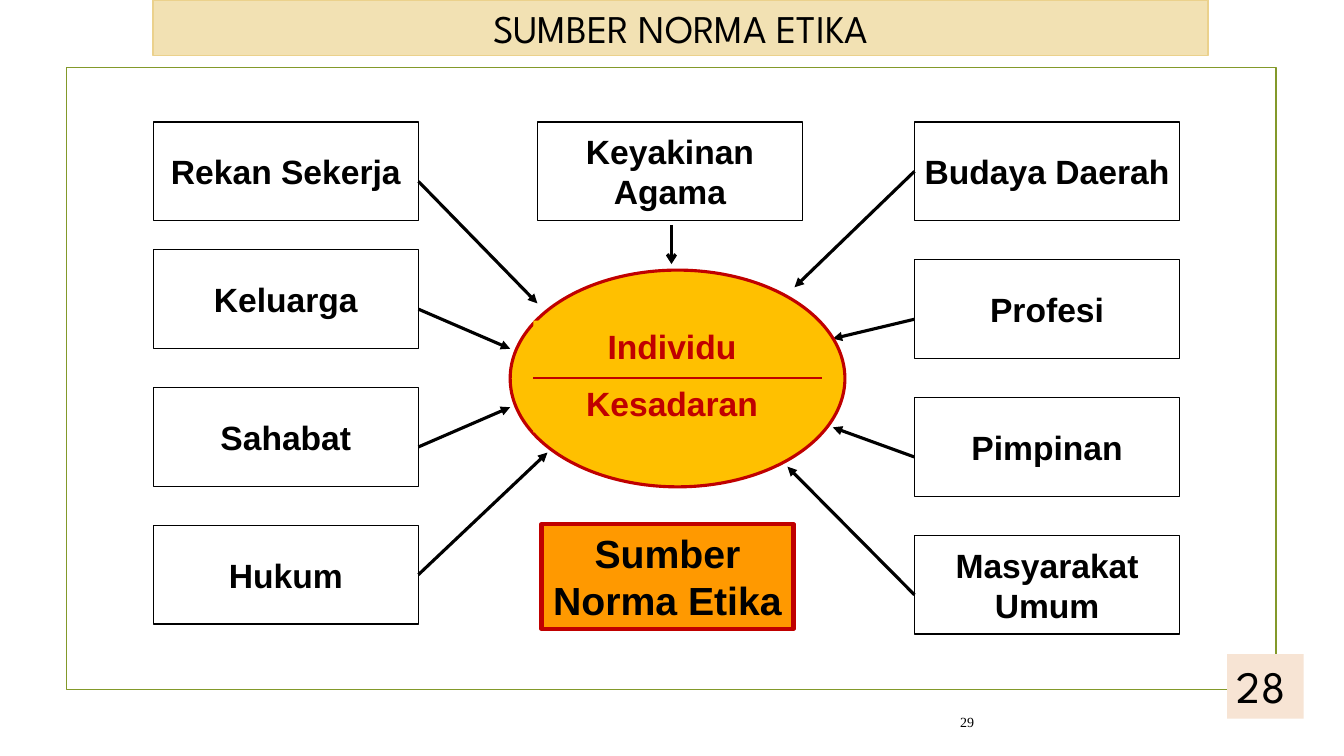
"""Build the slide on the sources of ethical norms."""
from lxml import etree
from pptx import Presentation, util as u
from pptx.dml.color import RGBColor
from pptx.enum import shapes, text
from pptx.oxml import ns

THEME = {
    "black": "000000", "red": "C00000", "gold": "FFC000", "orange": "FF9900",
    "olive": "83992A", "sand": "F2E1B3", "sand_edge": "EBD18C", "peach": "F7E4D4",
    "body_font": "Arial", "head_font": "League Spartan", "number_font": "Times New Roman",
    "label": 24, "heading": 28, "page": 32, "footer": 10,
}
TITLE = "SUMBER NORMA ETIKA"
CAPTION = "Sumber Norma Etika"
CENTRE = ["Individu", "Kesadaran"]
PAGE, FOOTER = "28", "29"
TOP_SOURCE = "Keyakinan Agama"

COLUMNS = {"left": 1.52, "middle": 5.33, "right": 9.07}
BOX_WIDTH, BOX_HEIGHT = 2.63, 0.98
FIRST_ROW, ROW_STEP = 1.21, 1.367
LEFT_SHIFT = 0.1

# Each source: label, arrow start below the box top, arrow tip
SOURCES = {
    "left": [
        ("Rekan Sekerja", 0.59, (5.33, 3.01)),
        ("Keluarga", 0.59, (5.06, 3.46)),
        ("Sahabat", 0.59, (5.06, 4.04)),
        ("Hukum", 0.49, (5.43, 4.49)),
    ],
    "right": [
        ("Budaya Daerah", 0.49, (7.88, 2.85)),
        ("Profesi", 0.59, (8.26, 3.36)),
        ("Pimpinan", 0.59, (8.26, 4.24)),
        ("Masyarakat Umum", 0.59, (7.81, 4.63)),
    ],
}


def colour(name):
    return RGBColor.from_string(THEME[name])


def apply(target, values):
    for name, value in values.items():
        setattr(target, name, value)


def place(shape, left, top, width, height):
    apply(shape, {"left": u.Inches(left), "top": u.Inches(top),
                  "width": u.Inches(width), "height": u.Inches(height)})


def paint(shape, fill=None, line=None, weight=1):
    if fill:
        shape.fill.solid()
        shape.fill.fore_color.rgb = colour(fill)
    else:
        shape.fill.background()
    if line:
        shape.line.color.rgb = colour(line)
        shape.line.width = u.Pt(weight)
    else:
        shape.line.fill.background()


def write(shape, lines, size="label", font="body_font", ink="black", bold=True,
          align=text.PP_ALIGN.CENTER, anchor=text.MSO_ANCHOR.MIDDLE):
    frame = shape.text_frame
    apply(frame, {"word_wrap": True, "auto_size": text.MSO_AUTO_SIZE.NONE,
                  "vertical_anchor": anchor,
                  "margin_left": u.Inches(0.1), "margin_right": u.Inches(0.1),
                  "margin_top": u.Inches(0.05), "margin_bottom": u.Inches(0.05)})
    for index, line in enumerate(lines):
        paragraph = frame.add_paragraph() if index else frame.paragraphs[0]
        paragraph.text = line
        paragraph.alignment = align
        if index:
            paragraph.space_before = u.Pt(THEME[size] / 2)
        apply(paragraph.font, {"name": THEME[font], "size": u.Pt(THEME[size]), "bold": bold})
        paragraph.font.color.rgb = colour(ink)


def add_box(slide, bounds, kind=shapes.MSO_SHAPE.RECTANGLE, **look):
    shape = slide.shapes.add_shape(kind, *map(u.Inches, bounds))
    shape.shadow.inherit = False
    paint(shape, **look)
    return shape


def add_line(slide, start, end, ink="black", weight=2.25, head=None):
    line = slide.shapes.add_connector(
        shapes.MSO_CONNECTOR.STRAIGHT, *map(u.Inches, (*start, *end)))
    line.line.color.rgb = colour(ink)
    line.line.width = u.Pt(weight)
    if head:
        etree.SubElement(line.line._get_or_add_ln(), ns.qn("a:tailEnd"), type=head)
    etree.SubElement(line._element.spPr, ns.qn("a:effectLst"))


def add_source(slide, label, left, top):
    box = add_box(slide, (left, top, BOX_WIDTH, BOX_HEIGHT), line="black")
    write(box, [label])


def add_sources(slide):
    for side, sources in SOURCES.items():
        left = COLUMNS[side]
        edge = left + BOX_WIDTH if side == "left" else left
        for row, (label, drop, tip) in enumerate(sources):
            shift = LEFT_SHIFT if side == "left" and row else 0
            top = FIRST_ROW + row * ROW_STEP - shift
            add_source(slide, label, left, top)
            add_line(slide, (edge, top + drop), tip, head="triangle")
    add_source(slide, TOP_SOURCE, COLUMNS["middle"], FIRST_ROW)
    add_line(slide, (6.66, 2.23), (6.66, 2.62), head="arrow")


def add_centre(slide):
    add_box(slide, (5.06, 2.68, 3.32, 2.15), shapes.MSO_SHAPE.OVAL,
            fill="gold", line="red", weight=2.25)
    core = add_box(slide, (5.29, 3.18, 2.75, 1.11), fill="gold")
    write(core, CENTRE, ink="red", anchor=text.MSO_ANCHOR.TOP)
    add_line(slide, (5.29, 3.75), (8.15, 3.75), ink="red", weight=1)
    caption = add_box(slide, (5.37, 5.2, 2.5, 1.04), fill="orange", line="red", weight=3)
    write(caption, [CAPTION], size="heading")


def add_title(slide):
    title = slide.shapes.title
    place(title, COLUMNS["left"], 0, 10.46, 0.55)
    paint(title, fill="sand", line="sand_edge", weight=1.25)
    write(title, [TITLE], size="heading", font="head_font", bold=False)


def add_numbers(slide):
    page = add_box(slide, (12.17, 6.49, 0.76, 0.64), fill="peach")
    write(page, [PAGE], size="page", font="head_font", bold=False,
          align=text.PP_ALIGN.LEFT, anchor=text.MSO_ANCHOR.TOP)
    footer = slide.shapes.add_textbox(*map(u.Inches, (9.17, 6.89, 0.59, 0.55)))
    write(footer, [FOOTER], size="footer", font="number_font", bold=False,
          align=text.PP_ALIGN.RIGHT)


def main():
    presentation = Presentation()
    apply(presentation, {"slide_width": u.Inches(13.33), "slide_height": u.Inches(7.5)})
    slide = presentation.slides.add_slide(presentation.slide_layouts[5])
    add_box(slide, (0.66, 0.67, 12, 6.17), line="olive", weight=1.25)
    add_sources(slide)
    add_centre(slide)
    add_title(slide)
    add_numbers(slide)
    presentation.save("out.pptx")


if __name__ == "__main__":
    main()
